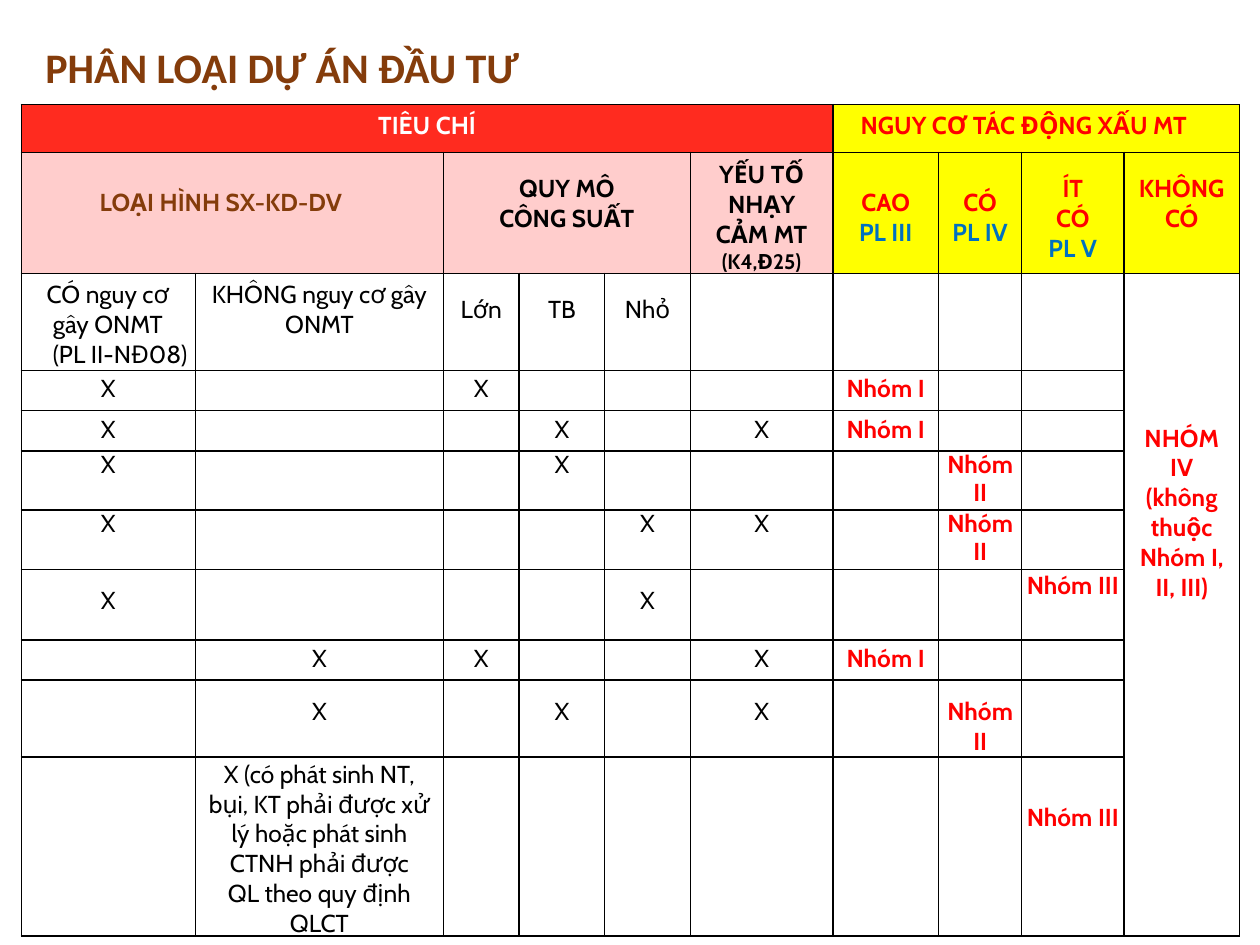
from dataclasses import dataclass

from lxml.etree import SubElement
from pptx import Presentation
from pptx.dml.color import RGBColor
from pptx.enum.text import MSO_ANCHOR as Anchor, MSO_AUTO_SIZE as AutoSize, PP_ALIGN as Align
from pptx.oxml.ns import qn
from pptx.util import Emu, Inches, Pt

RED, BROWN, BLUE = "FF0000", "843C0B", "0070C0"
BLACK, WHITE = "000000", "FFFFFF"
PINK, YELLOW, SCARLET = "FFCDCC", "FFFF00", "FF2B1F"
COLUMNS = [1.38, 1.97, 0.6, 0.68, 0.68, 1.13, 0.84, 0.66, 0.81, 0.92]
ROWS = [0.38, 0.93, 0.77, 0.32, 0.32, 0.47, 0.47, 0.56, 0.32, 0.61, 1.24]


@dataclass(frozen=True)
class Line:
    text: str
    color: str = BLACK
    left: float = 0
    right: float = 0
    align: Align = Align.CENTER
    small_end: str = ""


@dataclass(frozen=True)
class Entry:
    row: int
    column: int
    lines: tuple[Line, ...]
    top: float = 0.17
    bold: bool = False
    fill: str = ""
    span: tuple[int, int] = (1, 1)
    spacing: float = 0


@dataclass(frozen=True)
class Case:
    row: int
    marks: tuple[int, ...]
    group: str
    group_column: int
    top: float
    group_top: float
    spacing: float = 0


HEADERS = [
    Entry(0, 0, (Line("TIÊU CHÍ", WHITE),), 0.05, True, SCARLET, (1, 6)),
    Entry(0, 6, (Line("NGUY CƠ TÁC ĐỘNG XẤU MT", RED, 0.22, align=Align.LEFT),),
          0.05, True, YELLOW, (1, 4)),
    Entry(1, 0, (Line("LOẠI HÌNH SX-KD-DV", BROWN, 0.62, align=Align.LEFT),),
          0.28, True, PINK, (1, 2)),
    Entry(1, 2, (Line("QUY MÔ"), Line("CÔNG SUẤT")), 0.17, True, PINK, (1, 3)),
    Entry(1, 5, (Line("YẾU TỐ NHẠY CẢM MT ", left=0.18, right=0.18, small_end="(K4,Đ25)"),),
          0.06, True, PINK),
    Entry(1, 6, (Line("CAO", RED), Line("PL III", BLUE)), 0.28, True, YELLOW),
    Entry(1, 7, (Line("CÓ", RED), Line("PL IV", BLUE)), 0.28, True, YELLOW),
    Entry(1, 8, (Line("ÍT", RED), Line("CÓ", RED), Line("PL V", BLUE)), 0.17, True, YELLOW),
    Entry(1, 9, (Line("KHÔNG", RED), Line("CÓ", RED)), 0.17, True, YELLOW),
    Entry(2, 0, (Line("CÓ nguy cơ", left=0.2, align=Align.LEFT),
                 Line("gây ONMT", left=0.25, align=Align.LEFT),
                 Line("(PL II-NĐ08)", left=0.25, align=Align.LEFT)), 0.05),
    Entry(2, 1, (Line("KHÔNG nguy cơ gây"), Line("ONMT")), 0.05),
    Entry(2, 2, (Line("Lớn"),)),
    Entry(2, 3, (Line("TB"),)),
    Entry(2, 4, (Line("Nhỏ"),)),
    Entry(2, 9, (Line("NHÓM IV", RED, 0.15, 0.15),
                 Line("(không thuộc Nhóm I, II, III)", RED, 0.12, 0.12)),
          1.19, True, span=(9, 1)),
    Entry(10, 1, (Line("X (có phát sinh NT, bụi, KT phải được xử lý hoặc phát sinh",
                       left=0.09, right=0.09),
                  Line("CTNH phải được QL theo quy định QLCT", left=0.16, right=0.16)), 0.02),
]
CASES = [
    Case(3, (0, 2), "Nhóm I", 6, 0.03, 0.03),
    Case(4, (0, 3, 5), "Nhóm I", 6, 0.03, 0.03),
    Case(5, (0, 3), "Nhóm II", 7, 0.01, 0.01, 15.8),
    Case(6, (0, 4, 5), "Nhóm II", 7, 0.01, 0.01, 15.8),
    Case(7, (0, 4), "Nhóm III", 8, 0.13, 0.01),
    Case(8, (1, 2, 5), "Nhóm I", 6, 0.03, 0.03),
    Case(9, (1, 3, 5), "Nhóm II", 7, 0.13, 0.13),
    Case(10, (), "Nhóm III", 8, 0.02, 0.36),
]


def rgb(value: str) -> RGBColor:
    return RGBColor.from_string(value)


def style(span, size: float, color: str, bold: bool, name: str = "Cabin") -> None:
    span.font.name = name
    span.font.size = Pt(size)
    span.font.bold = bold
    span.font.color.rgb = rgb(color)


def draw_borders(cell) -> None:
    properties = cell._tc.get_or_add_tcPr()
    for index, side in enumerate(("lnL", "lnR", "lnT", "lnB")):
        border = SubElement(properties, qn(f"a:{side}"), w=str(Pt(1)))
        fill = SubElement(border, qn("a:solidFill"))
        SubElement(fill, qn("a:srgbClr"), val=BLACK)
        properties.insert(index, border)


def write_line(para, line: Line, entry: Entry) -> None:
    para.text = line.text
    para.alignment = line.align
    if entry.spacing:
        para.line_spacing = Pt(entry.spacing)
    settings = para._p.get_or_add_pPr()
    settings.set("marL", str(Inches(line.left)))
    settings.set("marR", str(Inches(line.right)))
    style(para.runs[0], 14, line.color, entry.bold)
    if line.small_end:
        span = para.add_run()
        span.text = line.small_end
        style(span, 12, line.color, entry.bold)


def fill_entry(table, entry: Entry) -> None:
    cell = table.cell(entry.row, entry.column)
    height, width = entry.span
    if entry.span != (1, 1):
        cell.merge(table.cell(entry.row + height - 1, entry.column + width - 1))
    cell.margin_top = Inches(entry.top)
    if entry.fill:
        cell.fill.solid()
        cell.fill.fore_color.rgb = rgb(entry.fill)
    frame = cell.text_frame
    for index, line in enumerate(entry.lines):
        para = frame.add_paragraph() if index else frame.paragraphs[0]
        write_line(para, line, entry)


def fill_case(table, case: Case) -> None:
    for column in case.marks:
        fill_entry(table, Entry(case.row, column, (Line("X"),), case.top, spacing=case.spacing))
    group = Line(case.group, RED)
    if case.group_column == 8:
        group = Line(case.group, RED, 0.04, align=Align.LEFT)
    fill_entry(table, Entry(case.row, case.group_column, (group,), case.group_top, True,
                            spacing=case.spacing))


def add_criteria_table(page) -> None:
    table = page.shapes.add_table(len(ROWS), len(COLUMNS), Inches(0.17), Inches(0.83),
                                  Inches(sum(COLUMNS)), Inches(sum(ROWS))).table
    table.first_row = table.horz_banding = False
    for column, width in zip(table.columns, COLUMNS):
        column.width = Inches(width)
    for row, height in zip(table.rows, ROWS):
        row.height = Inches(height)
    for cell in table.iter_cells():
        cell.margin_left = cell.margin_right = cell.margin_top = cell.margin_bottom = Emu(0)
        cell.fill.background()
    for entry in HEADERS:
        fill_entry(table, entry)
    for case in CASES:
        fill_case(table, case)
    for cell in table.iter_cells():
        draw_borders(cell)


def add_title(page) -> None:
    title = page.shapes.title
    title.left, title.top = Inches(0.3), Inches(0.32)
    title.width, title.height = Inches(9.41), Inches(0.42)
    frame = title.text_frame
    frame.text = "PHÂN LOẠI DỰ ÁN ĐẦU TƯ"
    frame.word_wrap = True
    frame.auto_size = AutoSize.SHAPE_TO_FIT_TEXT
    frame.vertical_anchor = Anchor.TOP
    frame.margin_left, frame.margin_top = Inches(0.06), Inches(0.01)
    frame.margin_right = frame.margin_bottom = Emu(0)
    para = frame.paragraphs[0]
    para.alignment = Align.LEFT
    style(para.runs[0], 24, BROWN, True, "Calibri")


def main() -> None:
    deck = Presentation()
    deck.slide_width, deck.slide_height = Inches(10), Inches(7.5)
    page = deck.slides.add_slide(deck.slide_layouts[5])
    add_title(page)
    add_criteria_table(page)
    deck.save("out.pptx")


if __name__ == "__main__":
    main()
